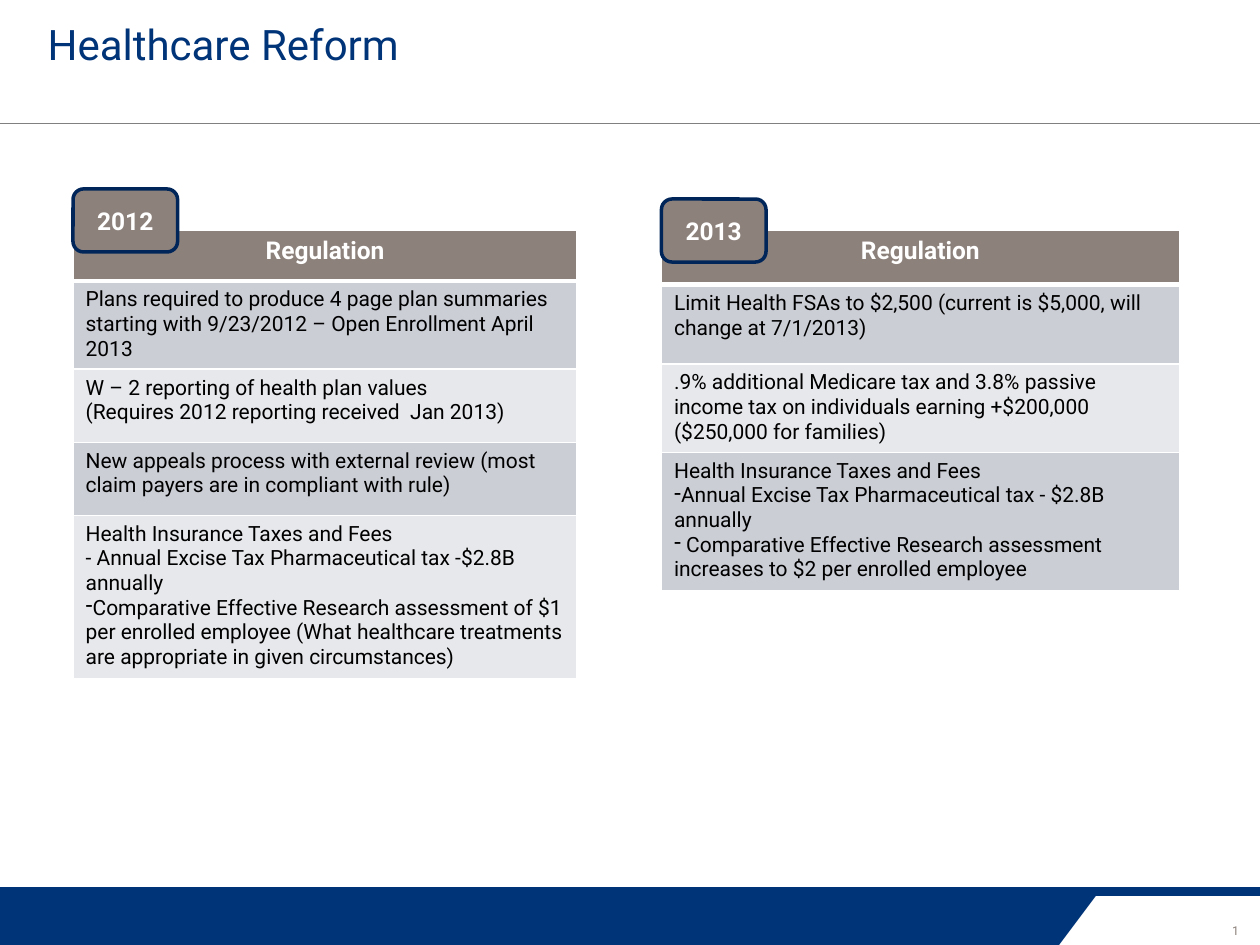
from dataclasses import dataclass

from lxml import etree
from pptx import Presentation
from pptx.dml.color import RGBColor
from pptx.enum.shapes import MSO_CONNECTOR as CONN, MSO_SHAPE as SHAPE
from pptx.enum.text import MSO_ANCHOR as ANCHOR, MSO_AUTO_SIZE as AUTO, PP_ALIGN as ALIGN
from pptx.oxml.ns import qn
from pptx.util import Inches, Pt


@dataclass(frozen=True)
class Theme:
    font: str = "Roboto"
    blue: str = "003478"
    navy: str = "002659"
    taupe: str = "8D817B"
    rule: str = "808080"
    white: str = "FFFFFF"
    black: str = "000000"
    bands: tuple = ("CCCED6", "E7E8EC")
    title: float = 24
    heading: float = 14
    body: float = 12
    number: float = 7


class SlideBuilder:
    def __init__(self, slide, theme):
        self.s, self.t = slide, theme

    def fill_text(self, tf, paras, size, color, align=ALIGN.LEFT, bold=False):
        """Fill a text frame; a (bullet, text) pair makes a bulleted paragraph."""
        for i, item in enumerate(paras):
            bullet, text = item if isinstance(item, tuple) else (None, item)
            p = tf.paragraphs[0] if i == 0 else tf.add_paragraph()
            p.alignment = align
            if bullet:
                pPr = p._p.get_or_add_pPr()
                pPr.set("marL", "0")
                pPr.set("indent", "0")
                etree.SubElement(pPr, qn("a:buChar"), char=bullet)
            r = p.add_run()
            r.text = text
            for name, value in {"name": self.t.font, "size": Pt(size), "bold": bold}.items():
                setattr(r.font, name, value)
            r.font.color.rgb = RGBColor.from_string(color)

    def text(self, box, text, size, color, align=ALIGN.LEFT, **frame):
        tf = self.s.shapes.add_textbox(*map(Inches, box)).text_frame
        for name, value in {"word_wrap": True, **frame}.items():
            setattr(tf, name, value)
        self.fill_text(tf, [text], size, color, align)

    def shape(self, kind, box, fill, line=None, adj=None):
        sp = self.s.shapes.add_shape(kind, *map(Inches, box))
        sp.shadow.inherit = False
        sp.fill.solid()
        sp.fill.fore_color.rgb = RGBColor.from_string(fill)
        if line:
            sp.line.color.rgb = RGBColor.from_string(line)
            sp.line.width = Pt(2)
        else:
            sp.line.fill.background()
        if adj is not None:
            sp.adjustments[0] = adj
        return sp

    def rule(self, x1, y1, x2, y2, color, width):
        ln = self.s.shapes.add_connector(CONN.STRAIGHT, *map(Inches, (x1, y1, x2, y2)))
        etree.SubElement(ln._element.spPr, qn("a:effectLst"))
        ln.line.color.rgb = RGBColor.from_string(color)
        ln.line.width = Pt(width)

    def badge(self, x, y, year):
        sp = self.shape(SHAPE.ROUNDED_RECTANGLE, (x, y, 0.83, 0.5), self.t.taupe, self.t.navy)
        sp.text_frame.vertical_anchor = ANCHOR.MIDDLE
        self.fill_text(sp.text_frame, [year], self.t.heading, self.t.white, ALIGN.CENTER, True)

    def borders(self, cell, **widths):
        tcPr = cell._tc.get_or_add_tcPr()
        for i, side in enumerate("LRTB"):
            ln = etree.Element(qn("a:ln" + side), w=str(Pt(widths.get(side, 1))))
            fill = etree.SubElement(ln, qn("a:solidFill"))
            etree.SubElement(fill, qn("a:srgbClr"), val=self.t.white)
            tcPr.insert(i, ln)

    def table(self, x, y, width, heights, heading, entries):
        t = self.t
        frame = self.s.shapes.add_table(len(heights), 1, *map(Inches, (x, y, width, sum(heights))))
        tbl = frame.table
        for i, (height, paras) in enumerate(zip(heights, [[heading], *entries])):
            tbl.rows[i].height = Inches(height)
            cell = tbl.cell(i, 0)
            cell.fill.solid()
            fill = t.bands[(i - 1) % 2] if i else t.taupe
            cell.fill.fore_color.rgb = RGBColor.from_string(fill)
            if i:
                self.fill_text(cell.text_frame, paras, t.body, t.black)
            else:
                self.fill_text(cell.text_frame, paras, t.heading, t.white, ALIGN.CENTER, True)
            self.borders(cell, **{0: {"B": 3}, 1: {"T": 3}}.get(i, {}))


# Year, left, badge top, width, row heights, entries
YEARS = [
    ("2013", 5.25, 1.58, 4.11, [0.43, 0.63, 0.7, 0.7], [
        ["Limit Health FSAs to $2,500 (current is $5,000, will change at 7/1/2013)"],
        [".9% additional Medicare tax and 3.8% passive income tax on individuals "
         "earning +$200,000 ($250,000 for families)"],
        ["Health Insurance Taxes and Fees",
         ("-", "Annual Excise Tax Pharmaceutical tax - $2.8B annually"),
         ("-", " Comparative Effective Research assessment increases to $2 per "
               "enrolled employee")],
    ]),
    ("2012", 0.58, 1.5, 4, [0.4, 0.6, 0.58, 0.58, 0.75], [
        ["Plans required to produce 4 page plan summaries starting with 9/23/2012 "
         "– Open Enrollment April 2013"],
        ["W – 2 reporting of health plan values",
         "(Requires 2012 reporting received  Jan 2013)"],
        ["New appeals process with external review (most claim payers are in "
         "compliant with rule)"],
        ["Health Insurance Taxes and Fees",
         "- Annual Excise Tax Pharmaceutical tax -$2.8B annually",
         ("-", "Comparative Effective Research assessment of $1 per enrolled employee "
               "(What healthcare treatments are appropriate in given circumstances)")],
    ]),
]


def main():
    theme = Theme()
    prs = Presentation()
    prs.slide_width, prs.slide_height = Inches(10), Inches(7.5)
    b = SlideBuilder(prs.slides.add_slide(prs.slide_layouts[6]), theme)

    # Header rule and footer band
    b.rule(0, 0.98, 10, 0.98, theme.rule, 0.75)
    b.shape(SHAPE.RECTANGLE, (0, 7.04, 10, 0.07), theme.blue)
    b.shape(SHAPE.PARALLELOGRAM, (0, 7.04, 8.75, 0.46), theme.blue, adj=0.75)
    b.shape(SHAPE.RECTANGLE, (0, 7.04, 5.61, 0.46), theme.blue)
    b.text((9.63, 7.28, 0.35, 0.22), "1", theme.number, theme.taupe, ALIGN.CENTER,
           word_wrap=False, auto_size=AUTO.SHAPE_TO_FIT_TEXT)

    # Title
    b.text((0.28, 0.1, 9.33, 0.84), "Healthcare Reform", theme.title, theme.blue)

    # Regulation tables with their year badges
    for year, x, badge_y, width, heights, entries in YEARS:
        b.table(x, 1.83, width, heights, "Regulation", entries)
        b.badge(x, badge_y, year)

    prs.save("out.pptx")


if __name__ == "__main__":
    main()
